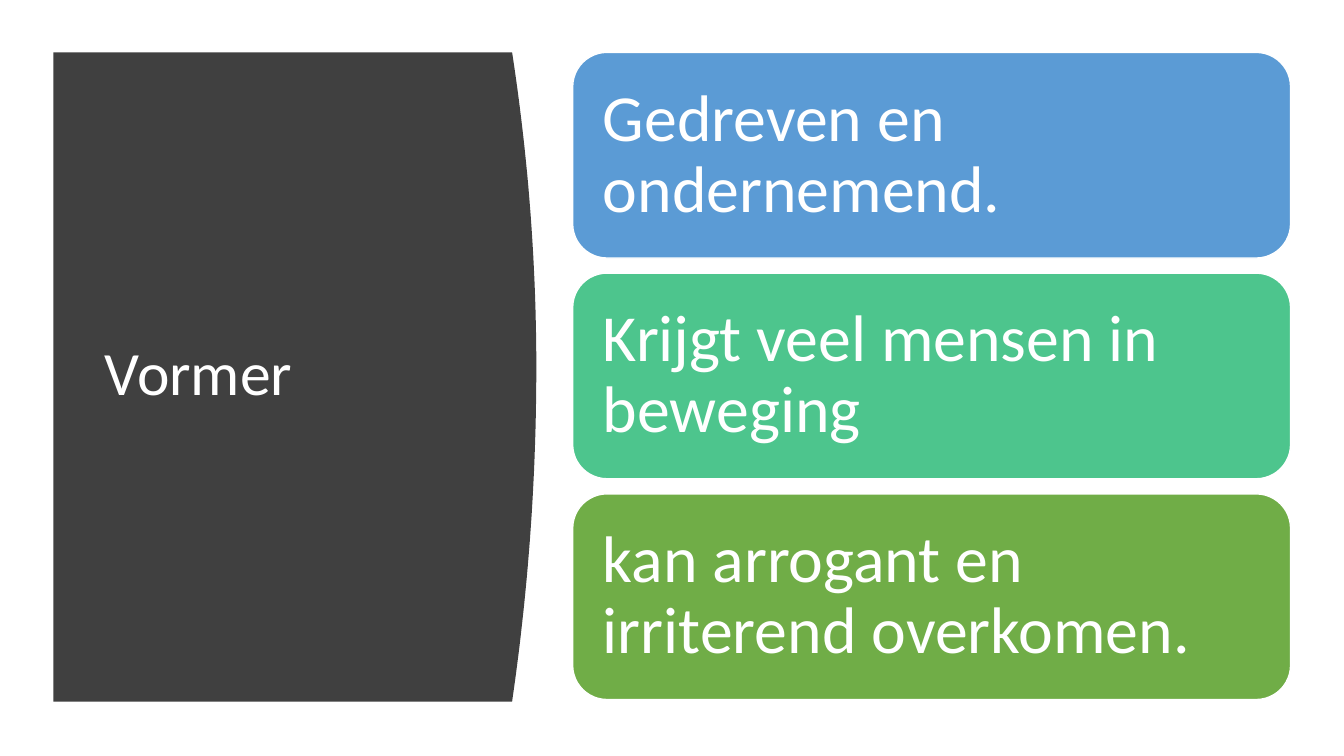
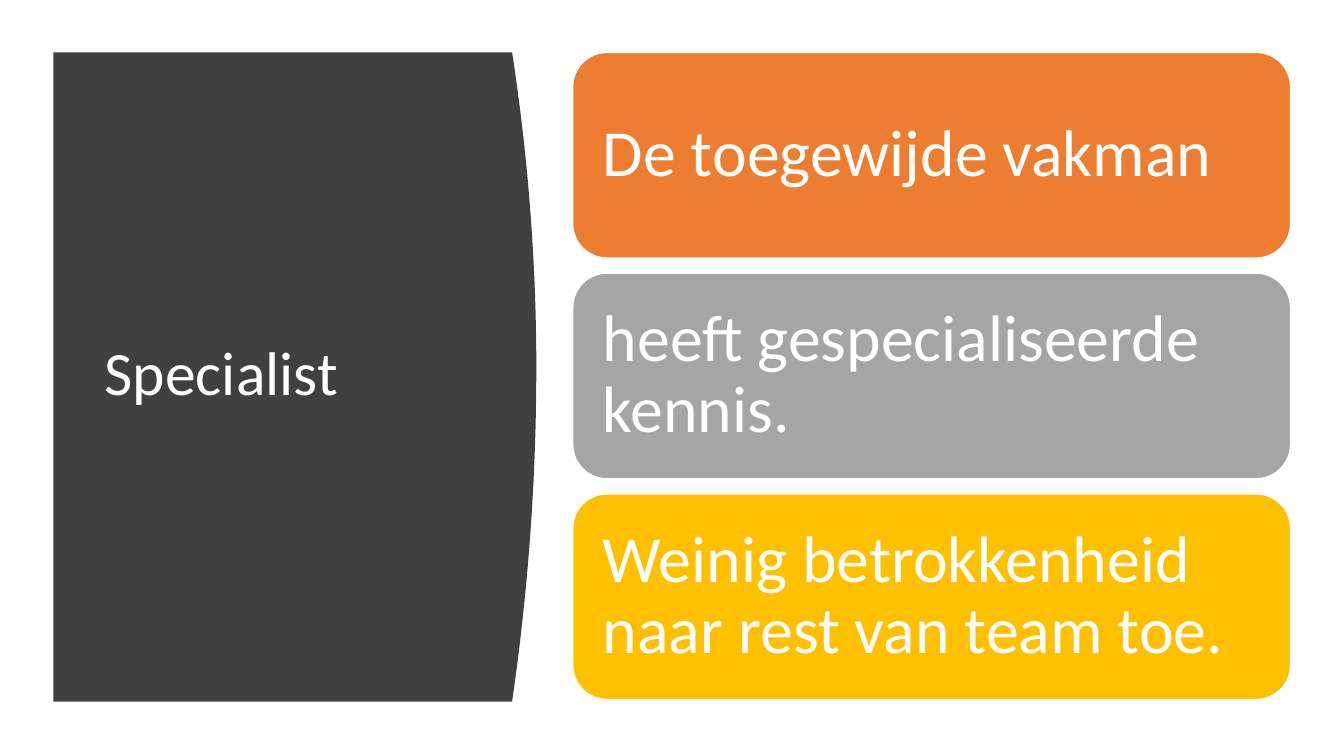
from dataclasses import dataclass

from pptx import Presentation
from pptx.dml.color import RGBColor
from pptx.enum.shapes import MSO_SHAPE as Shape
from pptx.enum.text import MSO_ANCHOR as Anchor, PP_ALIGN as Align
from pptx.slide import Slide
from pptx.text.text import TextFrame
from pptx.util import Inches, Pt


@dataclass(frozen=True)
class Theme:
    font: str = "Calibri"
    title_size: int = 44
    card_size: int = 47
    line_spacing: float = 0.9
    white: str = "FFFFFF"
    panel: str = "404040"
    blue: str = "5B9BD5"
    mint: str = "4DC58D"
    green: str = "70AD47"
    orange: str = "ED7D31"
    grey: str = "A5A5A5"
    gold: str = "FFC000"


@dataclass(frozen=True)
class Card:
    text: str
    color: str


@dataclass(frozen=True)
class Role:
    title: str
    cards: tuple[Card, ...]


THEME = Theme()

ROLES = (
    Role("Vormer", (
        Card("Gedreven en ondernemend.", THEME.blue),
        Card("Krijgt veel mensen in beweging", THEME.mint),
        Card("kan arrogant en irriterend overkomen.", THEME.green),
    )),
    Role("Specialist", (
        Card("De toegewijde vakman", THEME.orange),
        Card("heeft gespecialiseerde kennis.", THEME.grey),
        Card("Weinig betrokkenheid naar rest van team toe.", THEME.gold),
    )),
)

# Panel geometry, in inches
PANEL_LEFT, PANEL_TOP, PANEL_BOTTOM = 0.53, 0.52, 6.96
EDGE_CORNER, EDGE_PEAK, EDGE_PEAK_Y = 5.08, 5.32, 3.65
EDGE_STEPS = 48

# Card geometry, in inches
CARD_LEFT, CARD_TOP, CARD_WIDTH, CARD_HEIGHT = 5.68, 0.52, 7.12, 2.04
CARD_PITCH, CARD_INSET = 2.19, 0.2


def rgb(color: str) -> RGBColor:
    return RGBColor.from_string(color)


def write(tf: TextFrame, text: str, size: int) -> None:
    """Set one left-aligned white paragraph, centred vertically."""
    tf.word_wrap = True
    tf.vertical_anchor = Anchor.MIDDLE
    tf.text = text
    p = tf.paragraphs[0]
    p.alignment = Align.LEFT
    p.line_spacing = THEME.line_spacing
    for r in p.runs:
        r.font.name = THEME.font
        r.font.size = Pt(size)
        r.font.color.rgb = rgb(THEME.white)


def edge_x(y: float) -> float:
    """Bulging right edge: a parabola on each side of the peak."""
    end = PANEL_TOP if y < EDGE_PEAK_Y else PANEL_BOTTOM
    t = (y - EDGE_PEAK_Y) / (end - EDGE_PEAK_Y)
    return EDGE_PEAK - (EDGE_PEAK - EDGE_CORNER) * t ** 2


def add_panel(slide: Slide) -> None:
    step = (PANEL_BOTTOM - PANEL_TOP) / EDGE_STEPS
    heights = [PANEL_TOP + i * step for i in range(EDGE_STEPS + 1)]
    points = [(Inches(edge_x(y)), Inches(y)) for y in heights]
    points.append((Inches(PANEL_LEFT), Inches(PANEL_BOTTOM)))
    outline = slide.shapes.build_freeform(Inches(PANEL_LEFT), Inches(PANEL_TOP))
    outline.add_line_segments(points, close=True)
    sp = outline.convert_to_shape()
    sp.shadow.inherit = False
    sp.fill.solid()
    sp.fill.fore_color.rgb = rgb(THEME.panel)
    sp.line.fill.background()


def add_title(slide: Slide, title: str) -> None:
    box = slide.shapes.add_textbox(
        Inches(0.94), Inches(1.11), Inches(3.74), Inches(5.24))
    write(box.text_frame, title, THEME.title_size)


def add_card(slide: Slide, card: Card, row: int) -> None:
    sp = slide.shapes.add_shape(
        Shape.ROUNDED_RECTANGLE,
        Inches(CARD_LEFT), Inches(CARD_TOP + row * CARD_PITCH),
        Inches(CARD_WIDTH), Inches(CARD_HEIGHT))
    sp.shadow.inherit = False
    sp.fill.solid()
    sp.fill.fore_color.rgb = rgb(card.color)
    sp.line.color.rgb = rgb(THEME.white)
    sp.line.width = Pt(1)
    tf = sp.text_frame
    tf.margin_left = tf.margin_right = Inches(CARD_INSET)
    tf.margin_top = tf.margin_bottom = Inches(CARD_INSET)
    write(tf, card.text, THEME.card_size)


def main() -> None:
    prs = Presentation()
    prs.slide_width, prs.slide_height = Inches(13.33), Inches(7.5)
    blank = prs.slide_layouts[6]
    for role in ROLES:
        slide = prs.slides.add_slide(blank)
        add_panel(slide)
        add_title(slide, role.title)
        for row, card in enumerate(role.cards):
            add_card(slide, card, row)
    prs.save("out.pptx")


if __name__ == "__main__":
    main()
